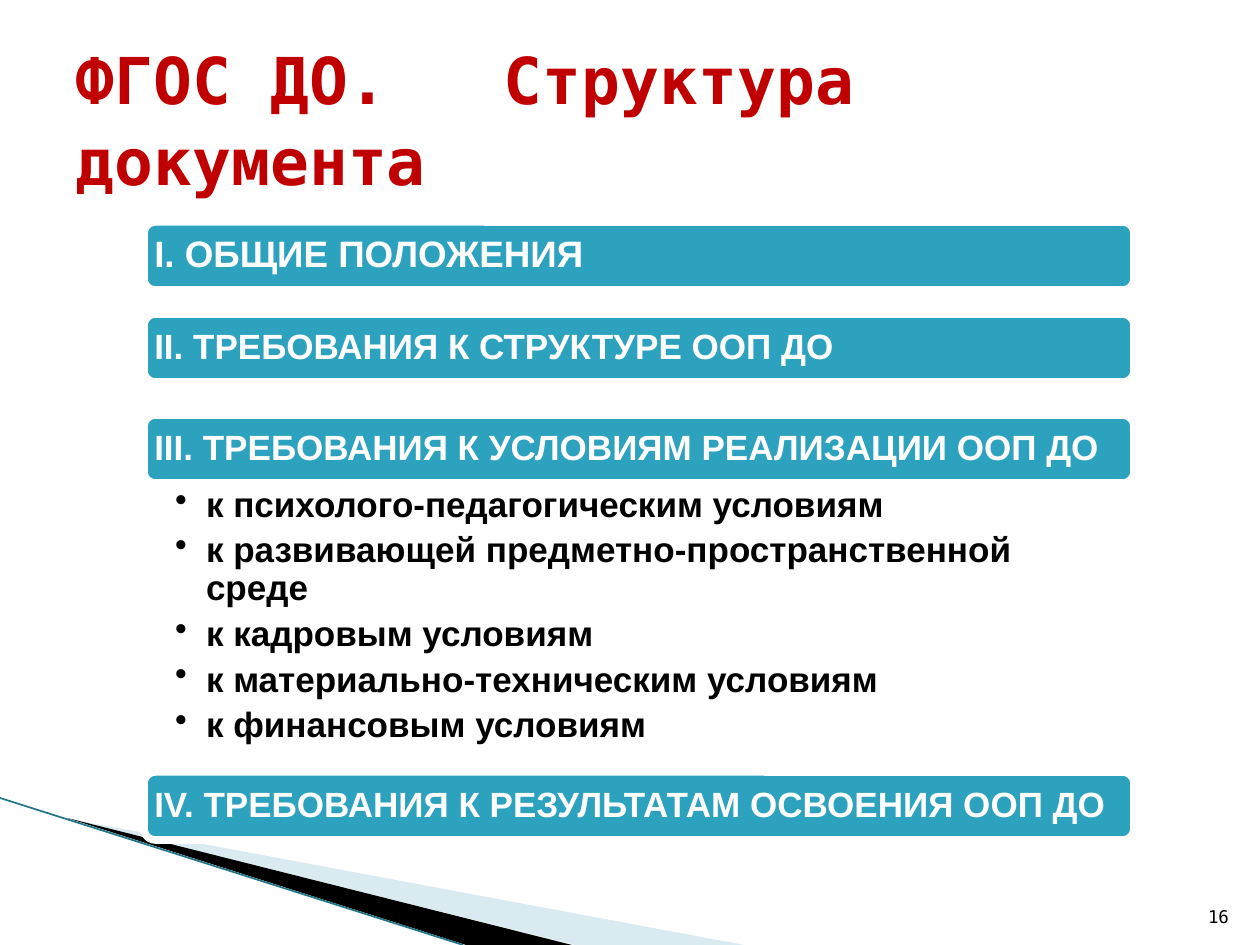
import pptx
import pptx.util
import pptx.dml.color
import pptx.enum.shapes
import pptx.enum.text
import pptx.oxml.ns
from dataclasses import dataclass
from lxml import etree

PX = 914400 // 126
ALIGN = pptx.enum.text.PP_ALIGN
ANCHOR = pptx.enum.text.MSO_ANCHOR


@dataclass(frozen=True)
class Theme:
    heading_font: str = "DejaVu Sans Mono"
    body_font: str = "Arial"
    title_size: float = 36.9
    first_bar_size: float = 21
    body_size: float = 20
    number_size: float = 10
    red: str = "C00000"
    teal: str = "2DA2BF"
    pale: str = "D9EAF1"
    edge: str = "1F7486"
    black: str = "000000"
    white: str = "FFFFFF"


THEME = Theme()
TITLE = "ФГОС ДО.\tСтруктура документа"
TITLE_TAB = 428
PAGE_NUMBER = "16"
BARS = [
    ("I. ОБЩИЕ ПОЛОЖЕНИЯ", 222, THEME.first_bar_size),
    ("II. ТРЕБОВАНИЯ К СТРУКТУРЕ ООП ДО", 314, THEME.body_size),
    ("III. ТРЕБОВАНИЯ К УСЛОВИЯМ РЕАЛИЗАЦИИ ООП ДО", 415, THEME.body_size),
    ("IV. ТРЕБОВАНИЯ К РЕЗУЛЬТАТАМ ОСВОЕНИЯ ООП ДО", 772, THEME.body_size),
]
CONDITIONS = [
    "к психолого-педагогическим условиям",
    "к развивающей предметно-пространственной среде",
    "к кадровым условиям",
    "к материально-техническим условиям",
    "к финансовым условиям",
]
CONDITIONS_TOP = 483
BAR_LEFT, BAR_WIDTH, BAR_HEIGHT = 144, 990, 68
BULLET_INDENT = 31
WEDGES = [
    ([(69, 819), (744, 945), (575, 945)], THEME.pale),
    ([(67, 818), (572, 945), (466, 945)], THEME.black),
]
EDGE_LINE = (0, 798, 463, 945)


def px(*values):
    return [value * PX for value in values]


def color(value):
    return pptx.dml.color.RGBColor.from_string(value)


def fill(shape, value):
    shape.shadow.inherit = False
    shape.fill.solid()
    shape.fill.fore_color.rgb = color(value)


def set_frame(shape, insets, anchor):
    frame = shape.text_frame
    frame.word_wrap = True
    frame.vertical_anchor = anchor
    (frame.margin_left, frame.margin_top,
     frame.margin_right, frame.margin_bottom) = px(*insets)
    return frame


def style(paragraph, font_name, size, value, bold=True, align=ALIGN.LEFT, spacing=0.9):
    paragraph.alignment = align
    paragraph.line_spacing = spacing
    for run in paragraph.runs:
        run.font.name = font_name
        run.font.size = pptx.util.Pt(size)
        run.font.bold = bold
        run.font.color.rgb = color(value)


def add_property(paragraph, tag, **attributes):
    properties = paragraph._p.get_or_add_pPr()
    return etree.SubElement(properties, pptx.oxml.ns.qn(tag), **attributes)


def add_background(slide):
    for points, value in WEDGES:
        builder = slide.shapes.build_freeform(*points[0], scale=PX)
        builder.add_line_segments(points[1:], close=True)
        wedge = builder.convert_to_shape()
        fill(wedge, value)
        wedge.line.fill.background()
    line = slide.shapes.add_connector(
        pptx.enum.shapes.MSO_CONNECTOR.STRAIGHT, *px(*EDGE_LINE))
    line.line.color.rgb = color(THEME.edge)
    line.line.width = pptx.util.Pt(0.95)
    etree.SubElement(line._element.spPr, pptx.oxml.ns.qn("a:effectLst"))


def add_title(slide):
    box = slide.shapes.add_textbox(*px(63, 38, 1134, 158))
    paragraph = set_frame(box, (13, 6, 13, 6), ANCHOR.MIDDLE).paragraphs[0]
    paragraph.text = TITLE
    tabs = add_property(paragraph, "a:tabLst")
    etree.SubElement(tabs, pptx.oxml.ns.qn("a:tab"), pos=str(TITLE_TAB * PX), algn="l")
    style(paragraph, THEME.heading_font, THEME.title_size, THEME.red, spacing=1.05)


def add_number(slide):
    box = slide.shapes.add_textbox(*px(1192, 883, 50, 50))
    paragraph = set_frame(box, (0, 6, 13, 6), ANCHOR.BOTTOM).paragraphs[0]
    paragraph.text = PAGE_NUMBER
    style(paragraph, THEME.heading_font, THEME.number_size, THEME.black,
          bold=False, align=ALIGN.RIGHT, spacing=1.0)


def add_bar(slide, text, top, size):
    bar = slide.shapes.add_shape(
        pptx.enum.shapes.MSO_SHAPE.ROUNDED_RECTANGLE,
        *px(BAR_LEFT, top, BAR_WIDTH, BAR_HEIGHT))
    fill(bar, THEME.teal)
    bar.line.color.rgb = color(THEME.white)
    bar.line.width = pptx.util.Pt(4.33)
    paragraph = set_frame(bar, (7, 7, 7, 7), ANCHOR.MIDDLE).paragraphs[0]
    paragraph.text = text
    style(paragraph, THEME.body_font, size, THEME.white)


def add_conditions(slide):
    box = slide.shapes.add_textbox(*px(BAR_LEFT, CONDITIONS_TOP, BAR_WIDTH, 270))
    frame = set_frame(box, (BULLET_INDENT, 4, 20, 4), ANCHOR.TOP)
    frame.text = "\n".join(CONDITIONS)
    for paragraph in frame.paragraphs:
        add_property(paragraph, "a:buChar", char="•")
        properties = paragraph._p.get_or_add_pPr()
        properties.set("marL", str(BULLET_INDENT * PX))
        properties.set("indent", str(-BULLET_INDENT * PX))
        paragraph.space_after = pptx.util.Pt(4.5)
        style(paragraph, THEME.body_font, THEME.body_size, THEME.black)


def main():
    presentation = pptx.Presentation()
    presentation.slide_width, presentation.slide_height = px(1260, 945)
    slide = presentation.slides.add_slide(presentation.slide_layouts[6])
    add_background(slide)
    add_number(slide)
    add_title(slide)
    for bar in BARS:
        add_bar(slide, *bar)
    add_conditions(slide)
    presentation.save("out.pptx")


if __name__ == "__main__":
    main()
